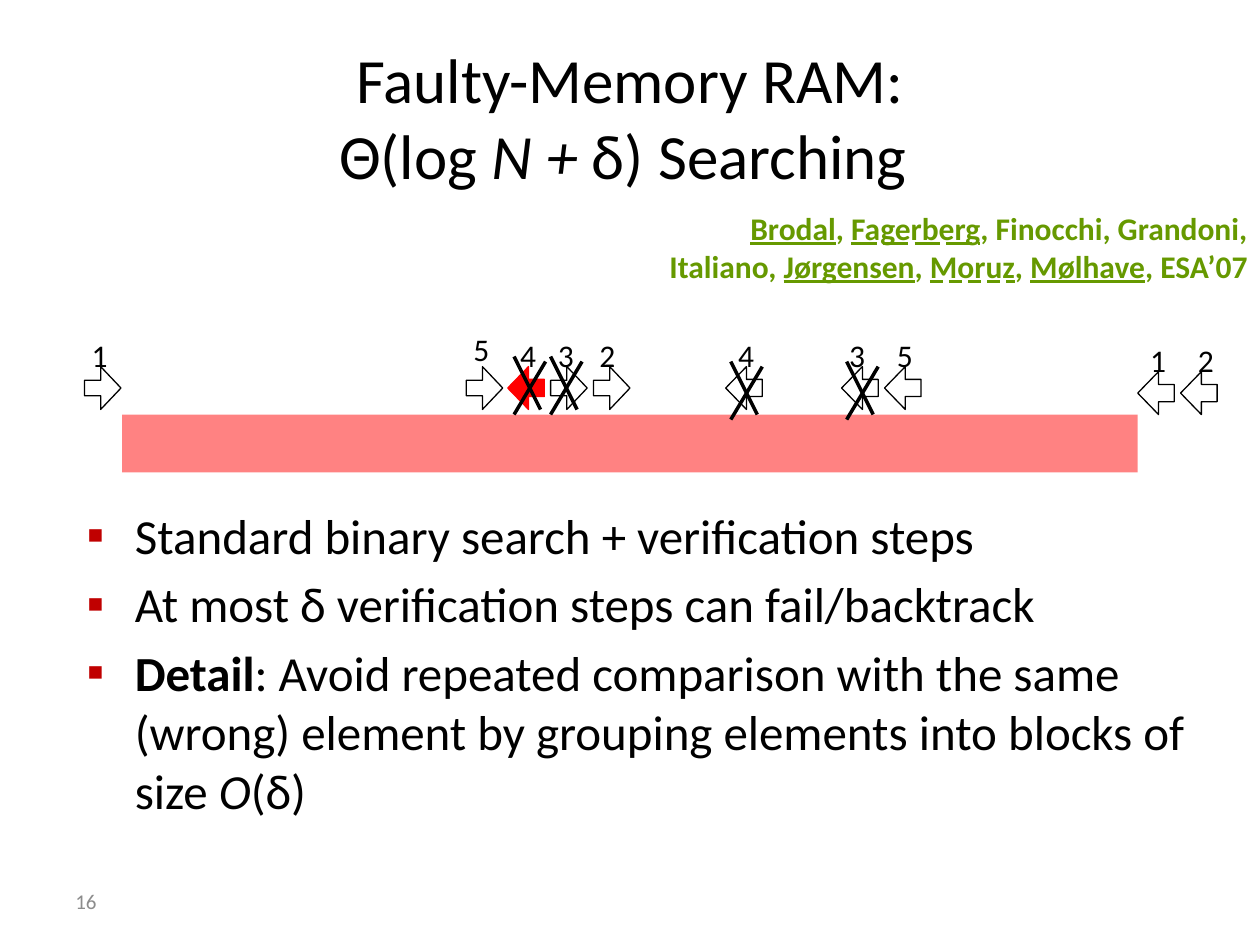
from lxml import etree
from pptx import Presentation
from pptx.dml.color import RGBColor
from pptx.enum.shapes import MSO_CONNECTOR, MSO_SHAPE
from pptx.enum.text import MSO_ANCHOR, MSO_AUTO_SIZE, MSO_UNDERLINE, PP_ALIGN
from pptx.oxml.ns import qn
from pptx.util import Inches, Pt

FONT = "Calibri"
BLACK = RGBColor(0x00, 0x00, 0x00)
WHITE = RGBColor(0xFF, 0xFF, 0xFF)
RED = RGBColor(0xFF, 0x00, 0x00)
BULLET_RED = RGBColor(0xC0, 0x00, 0x00)
GREEN = RGBColor(0x66, 0x99, 0x00)
GREY = RGBColor(0x8C, 0x8C, 0x8C)

SOLID = MSO_UNDERLINE.SINGLE_LINE
DASHED = MSO_UNDERLINE.DASH_LINE
HEAVY_DASHED = MSO_UNDERLINE.DASH_LONG_HEAVY_LINE

ARROW_WIDTH, ARROW_HEIGHT = 0.29, 0.34
RIGHT_ADJUSTMENTS = (0.361, 0.556)
LEFT_ADJUSTMENTS = (0.402, 0.568)

# Arrow left and top, points left, fill, digit, digit left and top
PROBES = [
    (0.67, 2.91, False, WHITE, "1", 0.63, 2.62),
    (3.70, 2.91, False, WHITE, "5", 3.66, 2.57),
    (4.03, 2.91, True, RED, "4", 4.03, 2.62),
    (4.37, 2.91, False, WHITE, "3", 4.33, 2.62),
    (4.71, 2.91, False, WHITE, "2", 4.66, 2.62),
    (5.76, 2.91, True, WHITE, "4", 5.76, 2.62),
    (6.68, 2.91, True, WHITE, "3", 6.64, 2.62),
    (7.02, 2.91, True, WHITE, "5", 7.02, 2.62),
    (9.03, 2.95, True, WHITE, "1", 9.03, 2.66),
    (9.37, 2.95, True, WHITE, "2", 9.41, 2.66),
]
CROSSES = [(4.08, 2.83), (4.37, 2.83), (5.80, 2.87), (6.72, 2.87)]

TITLE = [("Faulty-Memory RAM:\vΘ(log ", {}), ("N + ", {"italic": True}), ("δ) Searching ", {})]
BULLETS = [
    [("Standard binary search + verification steps", {})],
    [("At most δ verification steps can fail/backtrack", {})],
    [
        ("Detail", {"bold": True}),
        (": Avoid repeated comparison with the same (wrong) element"
         " by grouping elements into blocks of size ", {}),
        ("O", {"italic": True}),
        ("(δ)", {}),
    ],
]
AUTHORS = [
    ("Brodal", SOLID), (", ", None), ("Fagerberg", HEAVY_DASHED),
    (", Finocchi, Grandoni, Italiano, ", None), ("Jørgensen", SOLID), (", ", None),
    ("Moruz", DASHED), (", ", None), ("Mølhave", SOLID), (", ESA’07", None),
]


def place(shape, left, top, width, height):
    shape.left, shape.top = Inches(left), Inches(top)
    shape.width, shape.height = Inches(width), Inches(height)


def write_runs(paragraph, parts, size, color=BLACK):
    """Fill a paragraph from (text, font attributes) pairs."""
    for text, attributes in parts:
        for index, line in enumerate(text.split("\v")):
            if index:
                paragraph.add_line_break()
            run = paragraph.add_run()
            run.text = line
            run.font.name, run.font.size = FONT, Pt(size)
            run.font.color.rgb = color
            for name, value in attributes.items():
                setattr(run.font, name, value)


def add_text(slide, box, parts, size, color=BLACK):
    text_box = slide.shapes.add_textbox(*map(Inches, box))
    text_frame = text_box.text_frame
    text_frame.word_wrap = True
    write_runs(text_frame.paragraphs[0], parts, size, color)
    return text_frame


def add_arrow(slide, left, top, points_left, fill):
    arrow = slide.shapes.add_shape(
        MSO_SHAPE.RIGHT_ARROW, Inches(left), Inches(top),
        Inches(ARROW_WIDTH), Inches(ARROW_HEIGHT))
    adjustments = LEFT_ADJUSTMENTS if points_left else RIGHT_ADJUSTMENTS
    arrow.adjustments[0], arrow.adjustments[1] = adjustments
    if points_left:
        arrow.element.spPr.get_or_add_xfrm().set("flipH", "1")
    arrow.shadow.inherit = False
    arrow.fill.solid()
    arrow.fill.fore_color.rgb = fill
    arrow.line.color.rgb = RED if fill == RED else BLACK
    arrow.line.width = Pt(0.75)


def add_line(slide, x1, y1, x2, y2):
    line = slide.shapes.add_connector(
        MSO_CONNECTOR.STRAIGHT, Inches(x1), Inches(y1), Inches(x2), Inches(y2))
    line.line.color.rgb = BLACK
    line.line.width = Pt(2)
    etree.SubElement(line.element.spPr, qn("a:effectLst"))


def add_cross(slide, left, top):
    add_line(slide, left + 0.21, top + 0.42, left, top)
    add_line(slide, left + 0.25, top + 0.04, left, top + 0.46)


def add_memory_bar(slide):
    bar = slide.shapes.add_shape(
        MSO_SHAPE.RECTANGLE, Inches(0.97), Inches(3.29), Inches(8.06), Inches(0.46))
    bar.shadow.inherit = False
    bar.fill.solid()
    bar.fill.fore_color.rgb = RED
    color = bar.element.spPr.find(qn("a:solidFill"))[0]
    etree.SubElement(color, qn("a:alpha"), val="49000")
    bar.line.fill.background()


def set_bullet(paragraph):
    properties = paragraph._p.get_or_add_pPr()
    properties.set("marL", str(Inches(0.38)))
    properties.set("indent", str(-Inches(0.38)))
    color = etree.SubElement(properties, qn("a:buClr"))
    etree.SubElement(color, qn("a:srgbClr"), val=str(BULLET_RED))
    etree.SubElement(properties, qn("a:buFont"), typeface=FONT)
    etree.SubElement(properties, qn("a:buChar"), char="▪")


def fill_title(title):
    place(title, 0.5, 0.3, 9, 1.25)
    text_frame = title.text_frame
    text_frame.auto_size = MSO_AUTO_SIZE.NONE
    text_frame.vertical_anchor = MSO_ANCHOR.MIDDLE
    text_frame.paragraphs[0].alignment = PP_ALIGN.CENTER
    write_runs(text_frame.paragraphs[0], TITLE, 36)


def fill_body(body):
    place(body, 0.59, 3.96, 9.42, 2.77)
    text_frame = body.text_frame
    text_frame.auto_size = MSO_AUTO_SIZE.NONE
    for index, parts in enumerate(BULLETS):
        paragraph = text_frame.add_paragraph() if index else text_frame.paragraphs[0]
        paragraph.space_before = Pt(5.6)
        set_bullet(paragraph)
        write_runs(paragraph, parts, 28)


def main():
    presentation = Presentation()
    presentation.slide_width, presentation.slide_height = Inches(10), Inches(7.5)
    slide = presentation.slides.add_slide(presentation.slide_layouts[1])
    fill_title(slide.shapes.title)
    fill_body(slide.placeholders[1])

    add_memory_bar(slide)
    for left, top, points_left, fill, digit, digit_left, digit_top in PROBES:
        add_arrow(slide, left, top, points_left, fill)
        add_text(slide, (digit_left, digit_top, 0.34, 0.4), [(digit, {})], 18)
    for left, top in CROSSES:
        add_cross(slide, left, top)

    author_parts = [(text, {"bold": True, "underline": line}) for text, line in AUTHORS]
    authors = add_text(slide, (5, 1.61, 5, 0.71), author_parts, 18, GREEN)
    authors.paragraphs[0].alignment = PP_ALIGN.RIGHT
    number = add_text(slide, (0.5, 6.95, 2.33, 0.4), [("16", {})], 12, GREY)
    number.vertical_anchor = MSO_ANCHOR.MIDDLE
    presentation.save("out.pptx")


if __name__ == "__main__":
    main()
